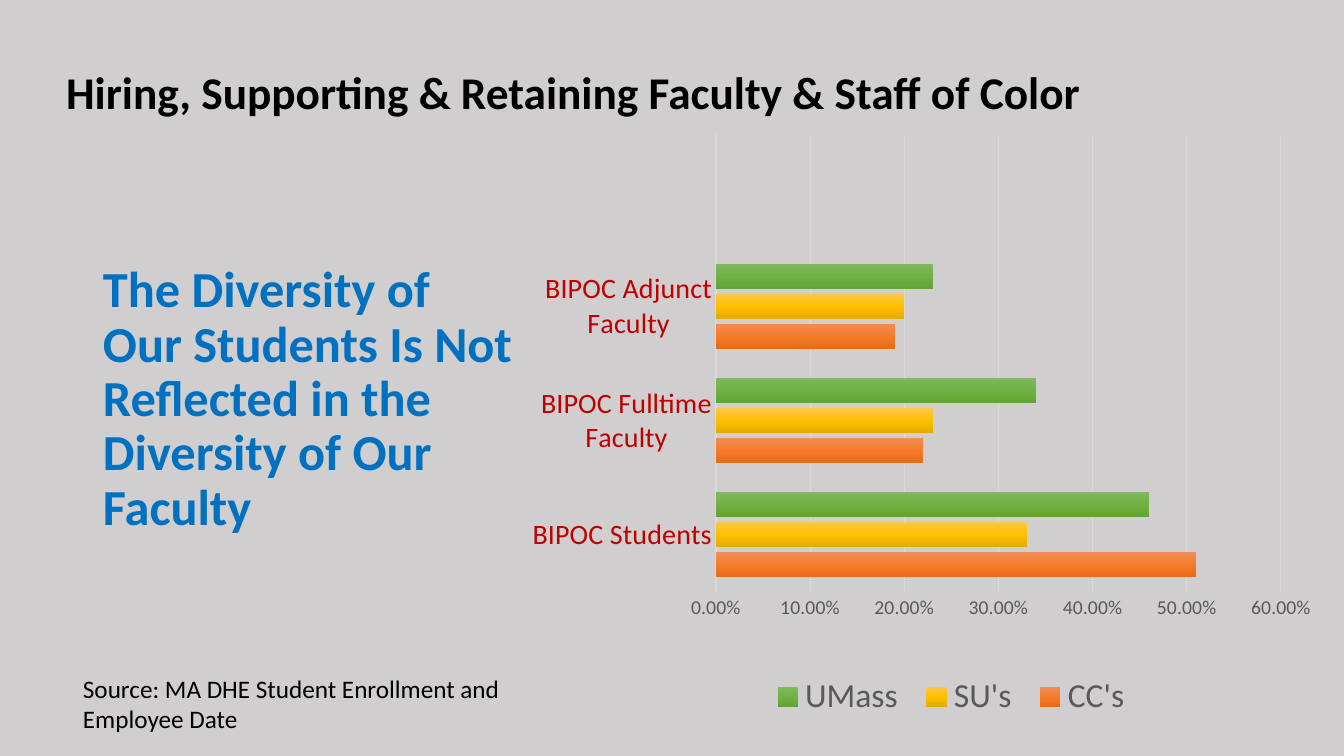
from lxml import etree
from pptx import Presentation
from pptx.chart.data import CategoryChartData
from pptx.dml.color import RGBColor
from pptx.enum.chart import XL_CHART_TYPE, XL_LEGEND_POSITION, XL_TICK_MARK
from pptx.enum.text import MSO_ANCHOR, PP_ALIGN
from pptx.oxml.ns import qn
from pptx.util import Emu, Pt

BAR_CLUSTERED = XL_CHART_TYPE.BAR_CLUSTERED
LEGEND_BOTTOM = XL_LEGEND_POSITION.BOTTOM
NO_TICKS = XL_TICK_MARK.NONE
MIDDLE, TOP = MSO_ANCHOR.MIDDLE, MSO_ANCHOR.TOP
CENTER, LEFT = PP_ALIGN.CENTER, PP_ALIGN.LEFT

EMU_PER_PX = 914400 / 100.8
FONT = "Calibri"
COLORS = {
    "background": "D0CECE",
    "text": "000000",
    "message": "0070C0",
    "category": "C00000",
    "muted": "595959",
    "grid": "D9D9D9",
}
CATEGORIES = ["BIPOC Students", "BIPOC Fulltime Faculty", "BIPOC Adjunct Faculty", ""]
SERIES = [
    ("CC's", (0.51, 0.22, 0.19, 0), ("F18C57", "F67B28", "E56C19")),
    ("SU's", (0.33, 0.23, 0.2, 0), ("FFC64B", "FFC000", "E3AB00")),
    ("UMass", (0.46, 0.34, 0.23, 0), ("81B861", "6FB242", "62A336")),
]
CHART_BOUNDS = (526, 133, 795, 600)
PLOT_BOUNDS = (190, 2, 565, 457)
LEGEND_BOUNDS = (234, 537, 382, 54)


def px(length):
    return Emu(round(length * EMU_PER_PX))


def rgb(name):
    return RGBColor.from_string(COLORS[name])


def set_font(font, size, color, bold=False):
    font.name, font.size, font.bold = FONT, Pt(size), bold
    font.color.rgb = rgb(color)


def place(shape, left, top, width, height):
    shape.left, shape.top = px(left), px(top)
    shape.width, shape.height = px(width), px(height)


def write_text(shape, text, size, color="text", bold=False, align=LEFT,
               anchor=TOP, line_spacing=1.0, inset_top=5):
    frame = shape.text_frame
    frame.word_wrap = True
    frame.vertical_anchor = anchor
    frame.margin_left = frame.margin_right = px(10)
    frame.margin_top, frame.margin_bottom = px(inset_top), px(5)
    para = frame.paragraphs[0]
    para.alignment, para.line_spacing = align, line_spacing
    para.space_before = Pt(0)
    span = para.add_run()
    span.text = text
    set_font(span.font, size, color, bold)


def add_text_box(page, bounds, text, **text_format):
    box = page.shapes.add_textbox(*map(px, bounds))
    write_text(box, text, **text_format)


def fill_gradient(series, shades):
    """Fill the bars from top to bottom with evenly spaced shades."""
    series.format.fill.gradient()
    series.format.fill.gradient_angle = 270
    stops = series.format.fill._fill._gradFill.find(qn("a:gsLst"))
    for stop in list(stops):
        stops.remove(stop)
    for index, shade in enumerate(shades):
        position = index * 100000 // (len(shades) - 1)
        stop = etree.SubElement(stops, qn("a:gs"), pos=str(position))
        etree.SubElement(stop, qn("a:srgbClr"), val=shade)


def fix_layout(part, index, bounds, **target):
    """Pin a chart part to bounds measured in px from the chart's corner."""
    for old_layout in part.findall(qn("c:layout")):
        part.remove(old_layout)
    layout = etree.Element(qn("c:layout"))
    part.insert(index, layout)
    manual = etree.SubElement(layout, qn("c:manualLayout"))
    chart_size = CHART_BOUNDS[2:] * 2
    fractions = [length / whole for length, whole in zip(bounds, chart_size)]
    settings = {**target, "xMode": "edge", "yMode": "edge", **dict(zip("xywh", fractions))}
    for name, value in settings.items():
        etree.SubElement(manual, qn(f"c:{name}"), val=str(value))


def format_axis(axis, size, color):
    axis.major_tick_mark = axis.minor_tick_mark = NO_TICKS
    set_font(axis.tick_labels.font, size, color)


def format_line(line, width):
    line.color.rgb = rgb("grid")
    line.width = Pt(width)


def add_diversity_chart(page):
    data = CategoryChartData(number_format="0.00%")
    data.categories = CATEGORIES
    for name, values, _ in SERIES:
        data.add_series(name, values)
    chart = page.shapes.add_chart(BAR_CLUSTERED, *map(px, CHART_BOUNDS), data).chart
    set_font(chart.font, 10, "text")
    chart.has_title = False
    fix_layout(chart._chartSpace.chart.plotArea, 0, PLOT_BOUNDS, layoutTarget="inner")

    plot = chart.plots[0]
    plot.gap_width, plot.overlap = 115, -20
    plot.vary_by_categories = False
    for series, (_, _, shades) in zip(plot.series, SERIES):
        fill_gradient(series, shades)

    format_axis(chart.category_axis, 20, "category")
    format_line(chart.category_axis.format.line, 1)
    values = chart.value_axis
    format_axis(values, 14, "muted")
    values.minimum_scale, values.maximum_scale, values.major_unit = 0, 0.6, 0.1
    values.tick_labels.number_format = "0.00%"
    values.tick_labels.number_format_is_linked = False
    values.format.line.fill.background()
    values.has_major_gridlines = True
    format_line(values.major_gridlines.format.line, 0.75)

    chart.has_legend = True
    legend = chart.legend
    legend.position = LEGEND_BOTTOM
    legend.include_in_layout = False
    set_font(legend.font, 24, "muted")
    fix_layout(legend._element, 1, LEGEND_BOUNDS)


def main():
    deck = Presentation()
    deck.slide_width, deck.slide_height = px(1344), px(756)
    page = deck.slides.add_slide(deck.slide_layouts[5])
    page.background.fill.solid()
    page.background.fill.fore_color.rgb = rgb("background")

    title = page.shapes.title
    place(title, 52, 23, 1043, 141)
    write_text(title, "Hiring, Supporting & Retaining Faculty & Staff of Color",
               size=32.4, bold=True, align=CENTER, anchor=MIDDLE,
               line_spacing=0.9, inset_top=7)
    add_text_box(page, (93, 184, 434, 463),
                 "The Diversity of Our Students Is Not Reflected in the Diversity of Our Faculty",
                 size=36, color="message", bold=True, line_spacing=0.9, inset_top=80)
    add_diversity_chart(page)
    add_text_box(page, (73, 668, 539, 72),
                 "Source: MA DHE Student Enrollment and Employee Date", size=18)
    deck.save("out.pptx")


if __name__ == "__main__":
    main()
